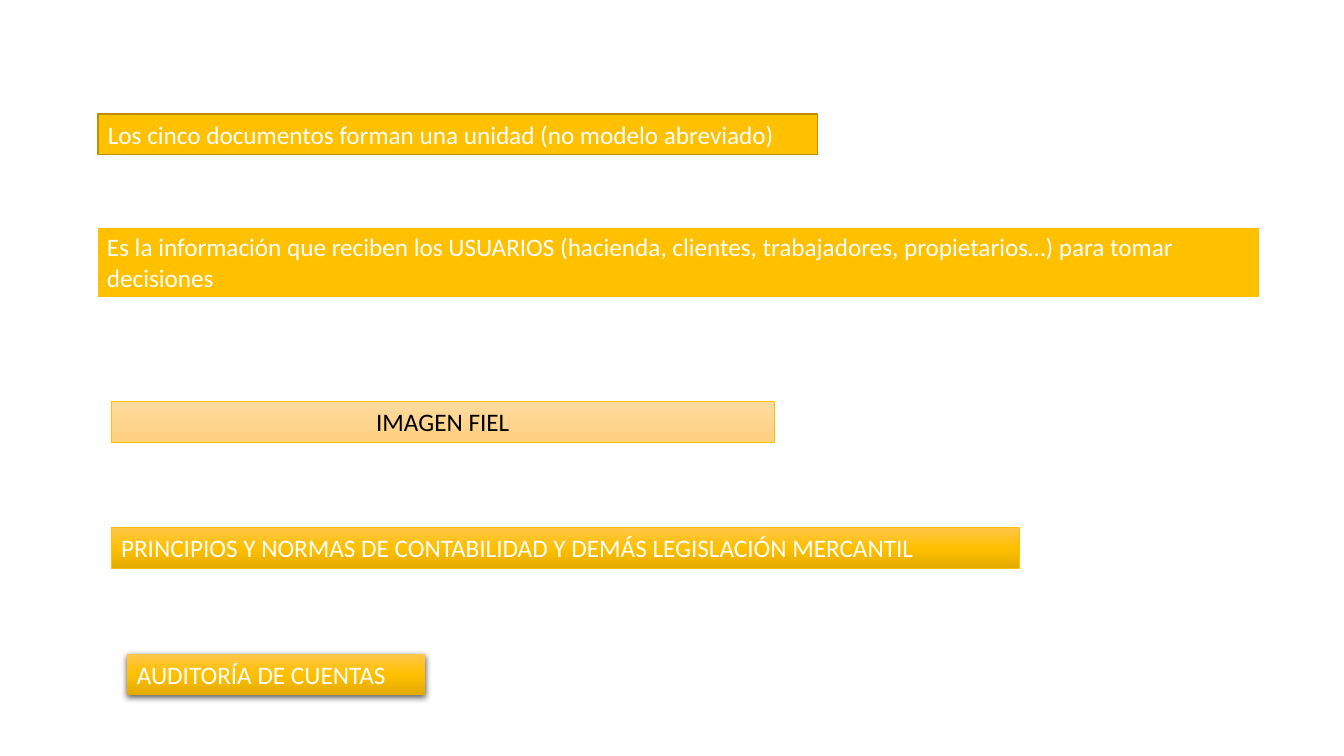
from copy import deepcopy

from lxml import etree
from pptx import Presentation
from pptx.dml.color import RGBColor
from pptx.enum.shapes import MSO_SHAPE
from pptx.enum.text import MSO_ANCHOR, MSO_AUTO_SIZE, PP_ALIGN
from pptx.oxml.ns import qn
from pptx.util import Pt

RECTANGLE = MSO_SHAPE.RECTANGLE
TOP = MSO_ANCHOR.TOP
GROW = MSO_AUTO_SIZE.SHAPE_TO_FIT_TEXT
LEFT = PP_ALIGN.LEFT
CENTER = PP_ALIGN.CENTER

WHITE = RGBColor(0xFF, 0xFF, 0xFF)
BLACK = RGBColor(0x00, 0x00, 0x00)
GOLD = RGBColor(0xFF, 0xC0, 0x00)
DARK_GOLD = RGBColor(0xBD, 0x8E, 0x00)
PALE_GRADIENT = (
    RGBColor(0xFF, 0xDB, 0x9E),
    RGBColor(0xFF, 0xD5, 0x90),
    RGBColor(0xFF, 0xD0, 0x7C),
)
GOLD_GRADIENT = (RGBColor(0xFF, 0xC6, 0x4B), GOLD, RGBColor(0xE3, 0xAB, 0x00))

LINE_HEIGHT = 29.08


def add_box(slide, text, left, top, width, height=LINE_HEIGHT, color=WHITE, alignment=LEFT):
    shape = slide.shapes.add_shape(RECTANGLE, Pt(left), Pt(top), Pt(width), Pt(height))
    shape.shadow.inherit = False
    frame = shape.text_frame
    frame.word_wrap = True
    frame.auto_size = GROW
    frame.vertical_anchor = TOP
    paragraph = frame.paragraphs[0]
    paragraph.alignment = alignment
    run = paragraph.add_run()
    run.text = text
    run.font.name = "Calibri"
    run.font.size = Pt(18)
    run.font.color.rgb = color
    return shape


def fill_solid(shape, color):
    shape.fill.solid()
    shape.fill.fore_color.rgb = color


def fill_gradient(shape, colors):
    shape.fill.gradient()
    shape.fill.gradient_angle = 270
    stop_list = shape._element.spPr.find(qn("a:gradFill")).find(qn("a:gsLst"))
    stop_list.insert(1, deepcopy(stop_list[0]))
    for index, (stop, color) in enumerate(zip(shape.fill.gradient_stops, colors)):
        stop.position = index / 2
        stop.color.rgb = color


def set_outline(shape, color, width):
    shape.line.color.rgb = color
    shape.line.width = Pt(width)


def add_shadow(shape, color, opacity, blur, distance):
    effects = shape._element.spPr.find(qn("a:effectLst"))
    shadow = etree.SubElement(
        effects,
        qn("a:outerShdw"),
        blurRad=str(Pt(blur)),
        dist=str(Pt(distance)),
        dir="5400000",
        algn="ctr",
        rotWithShape="0",
    )
    shadow_color = etree.SubElement(shadow, qn("a:srgbClr"), val=str(color))
    etree.SubElement(shadow_color, qn("a:alpha"), val=str(opacity * 1000))


def main():
    presentation = Presentation()
    presentation.slide_width = Pt(960)
    presentation.slide_height = Pt(540)
    slide = presentation.slides.add_slide(presentation.slide_layouts[6])

    unity = add_box(
        slide, "Los cinco documentos forman una unidad (no modelo abreviado)", 70, 81.5, 514
    )
    fill_solid(unity, GOLD)
    set_outline(unity, DARK_GOLD, 1)

    users = add_box(
        slide,
        "Es la información que reciben los USUARIOS (hacienda, clientes, trabajadores, "
        "propietarios…) para tomar decisiones",
        69.3, 162, 830.5, 50.9,
    )
    fill_solid(users, GOLD)
    set_outline(users, WHITE, 1.5)

    fair_view = add_box(
        slide, "IMAGEN FIEL", 79.4, 287, 473.8, color=BLACK, alignment=CENTER
    )
    fill_gradient(fair_view, PALE_GRADIENT)
    set_outline(fair_view, GOLD, 0.5)

    principles = add_box(
        slide,
        "PRINCIPIOS Y NORMAS DE CONTABILIDAD Y DEMÁS LEGISLACIÓN MERCANTIL",
        79.4, 376.9, 648.7,
    )
    fill_gradient(principles, GOLD_GRADIENT)
    set_outline(principles, GOLD, 0.5)

    audit = add_box(slide, "AUDITORÍA DE CUENTAS", 90.7, 467.2, 213.1)
    fill_gradient(audit, GOLD_GRADIENT)
    audit.line.fill.background()
    add_shadow(audit, BLACK, opacity=63, blur=4.5, distance=1.5)

    presentation.save("out.pptx")


if __name__ == "__main__":
    main()
